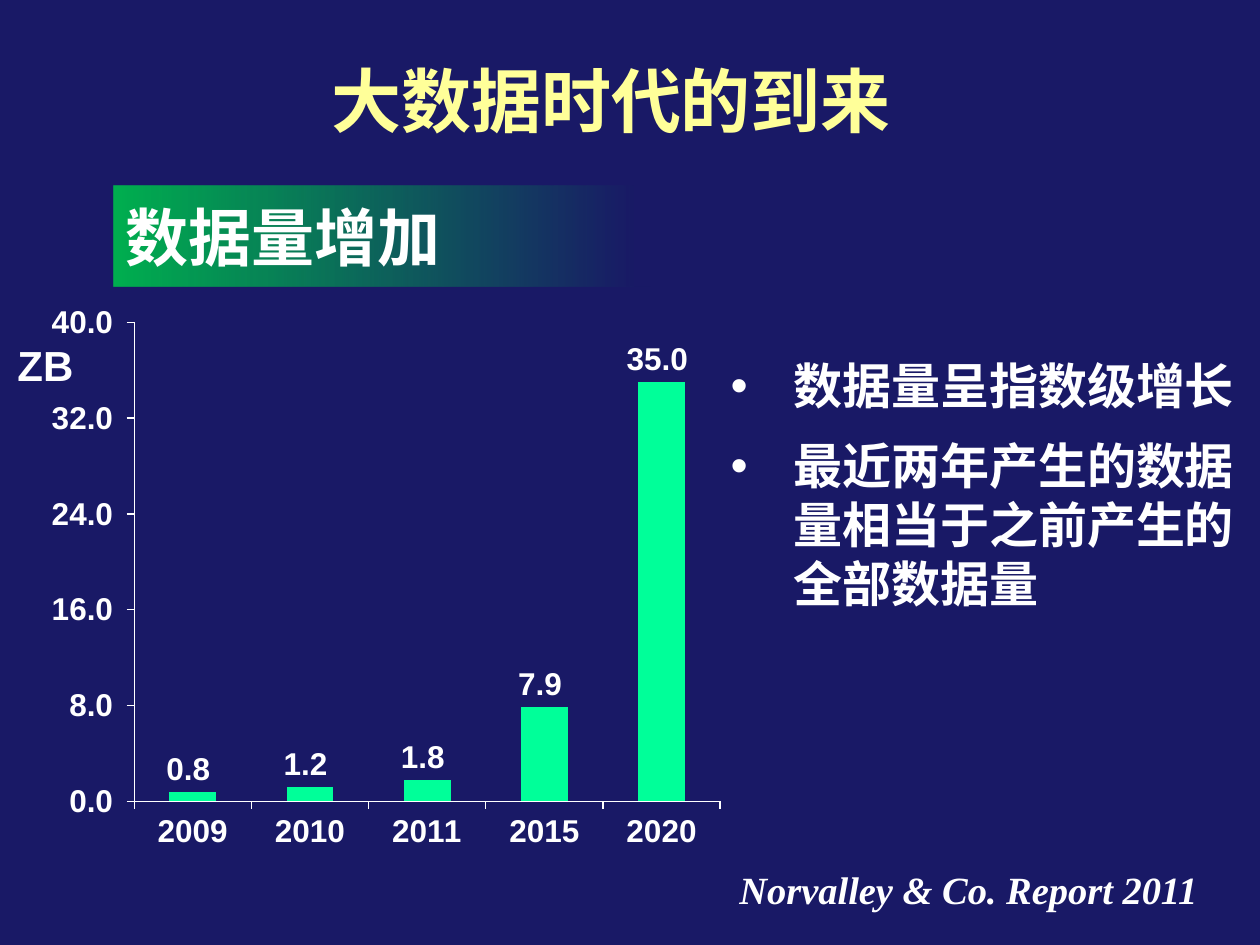
from lxml.etree import SubElement
from pptx import Presentation
from pptx.chart.data import CategoryChartData
from pptx.dml.color import RGBColor
from pptx.enum.chart import XL_CHART_TYPE as ChartType, XL_LABEL_POSITION as LabelPos, XL_TICK_MARK as Tick
from pptx.enum.shapes import MSO_SHAPE as Shape
from pptx.enum.text import MSO_ANCHOR as Anchor, MSO_AUTO_SIZE as AutoSize, PP_ALIGN as Align
from pptx.oxml.ns import qn
from pptx.util import Inches, Pt

COLORS = {"background": "191966", "title": "FFFF99", "text": "FFFFFF", "bar": "00FF99", "banner": "00B050"}
CJK = "Noto Sans CJK SC"
SLIDE_W, SLIDE_H = Inches(10), Inches(7.5)
VOLUMES = {"2009": 0.8, "2010": 1.2, "2011": 1.8, "2015": 7.9, "2020": 35}
NUMBER_FORMAT = "0.0_ "


def rgb(name):
    return RGBColor.from_string(COLORS[name])


def share(left, top, width, height):
    return (round(SLIDE_W * left), round(SLIDE_H * top),
            round(SLIDE_W * width), round(SLIDE_H * height))


def style_font(font, size, name, color="text", italic=None):
    font.size, font.name, font.bold, font.italic = Pt(size), name, True, italic
    font.color.rgb = rgb(color)


def write(frame, lines, size, name, color="text", italic=None):
    frame.text = "\n".join(lines)
    for paragraph in frame.paragraphs:
        for run in paragraph.runs:
            style_font(run.font, size, name, color, italic)
            SubElement(run.font._element, qn("a:ea"), typeface=CJK)


def add_title(slide, box):
    frame = slide.shapes.add_textbox(*box).text_frame
    frame.word_wrap = True
    frame.vertical_anchor = Anchor.MIDDLE
    frame.margin_left = frame.margin_right = Inches(0.05)
    write(frame, ["大数据时代的到来"], 40, "Calibri", "title")
    frame.paragraphs[0].alignment = Align.CENTER


def add_banner(slide, box):
    banner = slide.shapes.add_shape(Shape.RECTANGLE, *box)
    banner.shadow.inherit = False
    banner.line.fill.background()
    banner.fill.gradient()
    banner.fill.gradient_angle = 180
    for stop, position in zip(banner.fill.gradient_stops, (0.03, 1)):
        stop.position = position
        stop.color.rgb = rgb("banner")
    clear_end = next(banner._element.iter(qn("a:srgbClr")))
    SubElement(clear_end, qn("a:alpha"), val="0")
    frame = banner.text_frame
    frame.vertical_anchor = Anchor.MIDDLE
    write(frame, ["数据量增加"], 36, CJK)
    frame.paragraphs[0].alignment = Align.LEFT


def add_points(slide, box):
    frame = slide.shapes.add_textbox(*box).text_frame
    frame.word_wrap = True
    frame.auto_size = AutoSize.SHAPE_TO_FIT_TEXT
    write(frame, ["数据量呈指数级增长", "最近两年产生的数据量相当于之前产生的全部数据量"], 28, CJK)
    indent = Inches(0.5)
    for paragraph in frame.paragraphs:
        paragraph.space_before = Pt(12)
        properties = paragraph._p.get_or_add_pPr()
        properties.set("marL", str(indent))
        properties.set("indent", str(-indent))
        SubElement(properties, qn("a:buFont"), typeface="Arial")
        SubElement(properties, qn("a:buChar"), char="•")


def add_caption(slide, box, text, size, font, italic=None):
    frame = slide.shapes.add_textbox(*box).text_frame
    frame.word_wrap = False
    frame.auto_size = AutoSize.SHAPE_TO_FIT_TEXT
    write(frame, [text], size, font, italic=italic)


def place_plot(chart, **shares):
    plot_area = chart._chartSpace.chart.plotArea
    layout = plot_area.find(qn("c:layout"))
    if layout is None:
        layout = SubElement(plot_area, qn("c:layout"))
        plot_area.insert(0, layout)
    manual = SubElement(layout, qn("c:manualLayout"))
    settings = {"layoutTarget": "inner", "xMode": "edge", "yMode": "edge", **shares}
    for tag, value in settings.items():
        SubElement(manual, qn(f"c:{tag}"), val=str(value))


def add_volume_chart(slide, box):
    data = CategoryChartData()
    data.categories = list(VOLUMES)
    data.add_series("ZB", list(VOLUMES.values()))
    chart = slide.shapes.add_chart(ChartType.COLUMN_CLUSTERED, *box, data).chart
    chart.has_legend = chart.has_title = False
    style_font(chart.font, 18, "Arial")
    place_plot(chart, x=0.157, y=0.093, w=0.816, h=0.813)

    for axis in (chart.category_axis, chart.value_axis):
        axis.has_major_gridlines = False
        axis.major_tick_mark, axis.minor_tick_mark = Tick.OUTSIDE, Tick.NONE
        axis.format.line.color.rgb = rgb("text")
        axis.format.line.width = Pt(0.75)
        style_font(axis.tick_labels.font, 18, "Arial")
    scale = chart.value_axis
    scale.minimum_scale, scale.maximum_scale, scale.major_unit = 0, 40, 8

    plot = chart.plots[0]
    plot.gap_width = 150
    plot.vary_by_categories = False
    bars = plot.series[0]
    bars.format.fill.solid()
    bars.format.fill.fore_color.rgb = rgb("bar")
    labels = bars.data_labels
    labels.show_value = True
    labels.position = LabelPos.OUTSIDE_END
    style_font(labels.font, 18, "Arial")
    for numbers in (scale.tick_labels, labels):
        numbers.number_format = NUMBER_FORMAT
        numbers.number_format_is_linked = False


def main():
    deck = Presentation()
    deck.slide_width, deck.slide_height = SLIDE_W, SLIDE_H
    slide = deck.slides.add_slide(deck.slide_layouts[6])
    slide.background.fill.solid()
    slide.background.fill.fore_color.rgb = rgb("background")

    add_points(slide, share(0.57, 0.37, 0.43, 0.29))
    add_title(slide, share(0.06, 0.04, 0.85, 0.13))
    add_volume_chart(slide, share(0.017, 0.283, 0.57, 0.624))
    add_banner(slide, share(0.09, 0.197, 0.426, 0.106))
    add_caption(slide, share(0.004, 0.353, 0.065, 0.067), "ZB", 24, "Arial")
    add_caption(slide, share(0.577, 0.91, 0.388, 0.062),
                "Norvalley & Co. Report 2011", 22, "Times New Roman", italic=True)
    deck.save("out.pptx")


if __name__ == "__main__":
    main()
